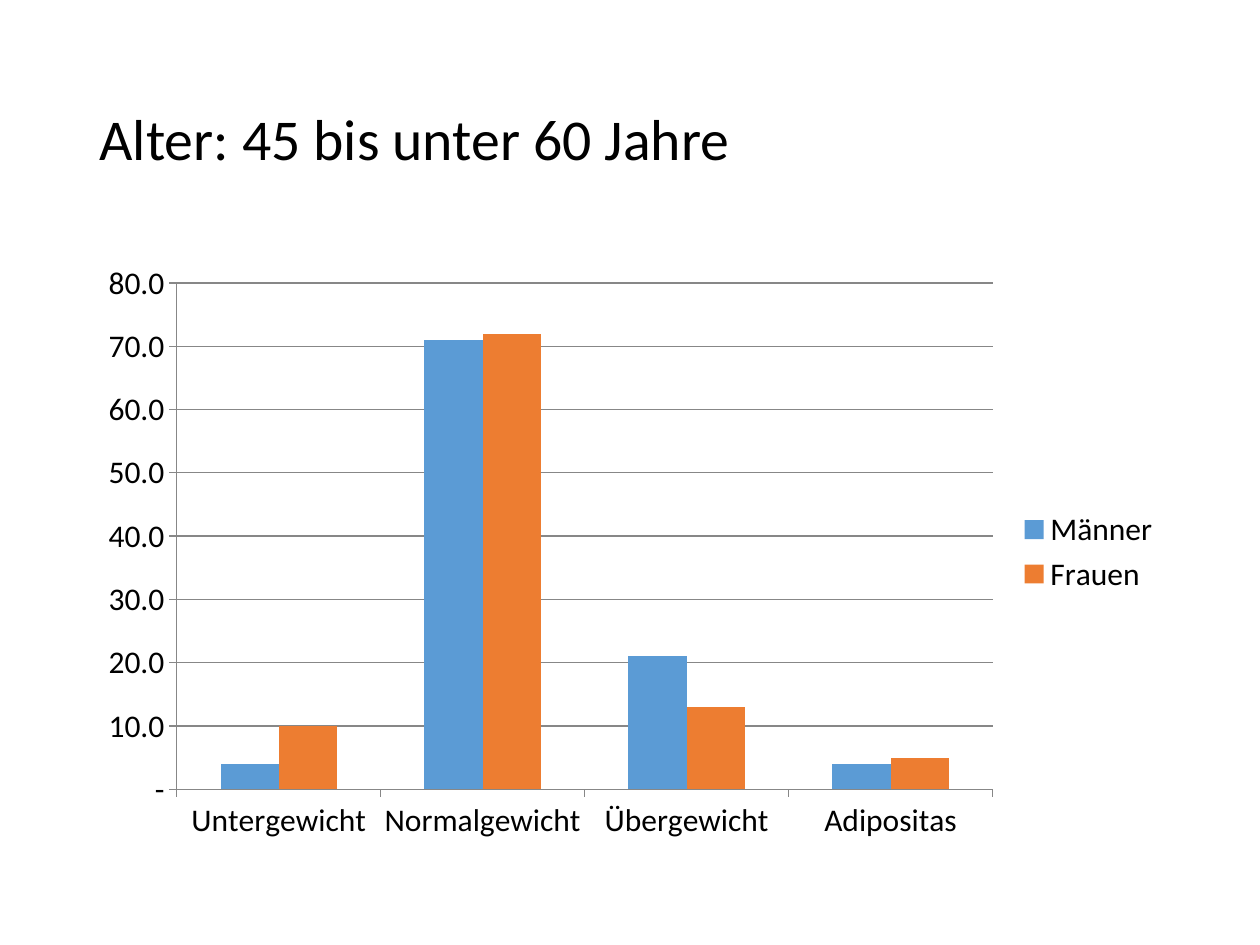
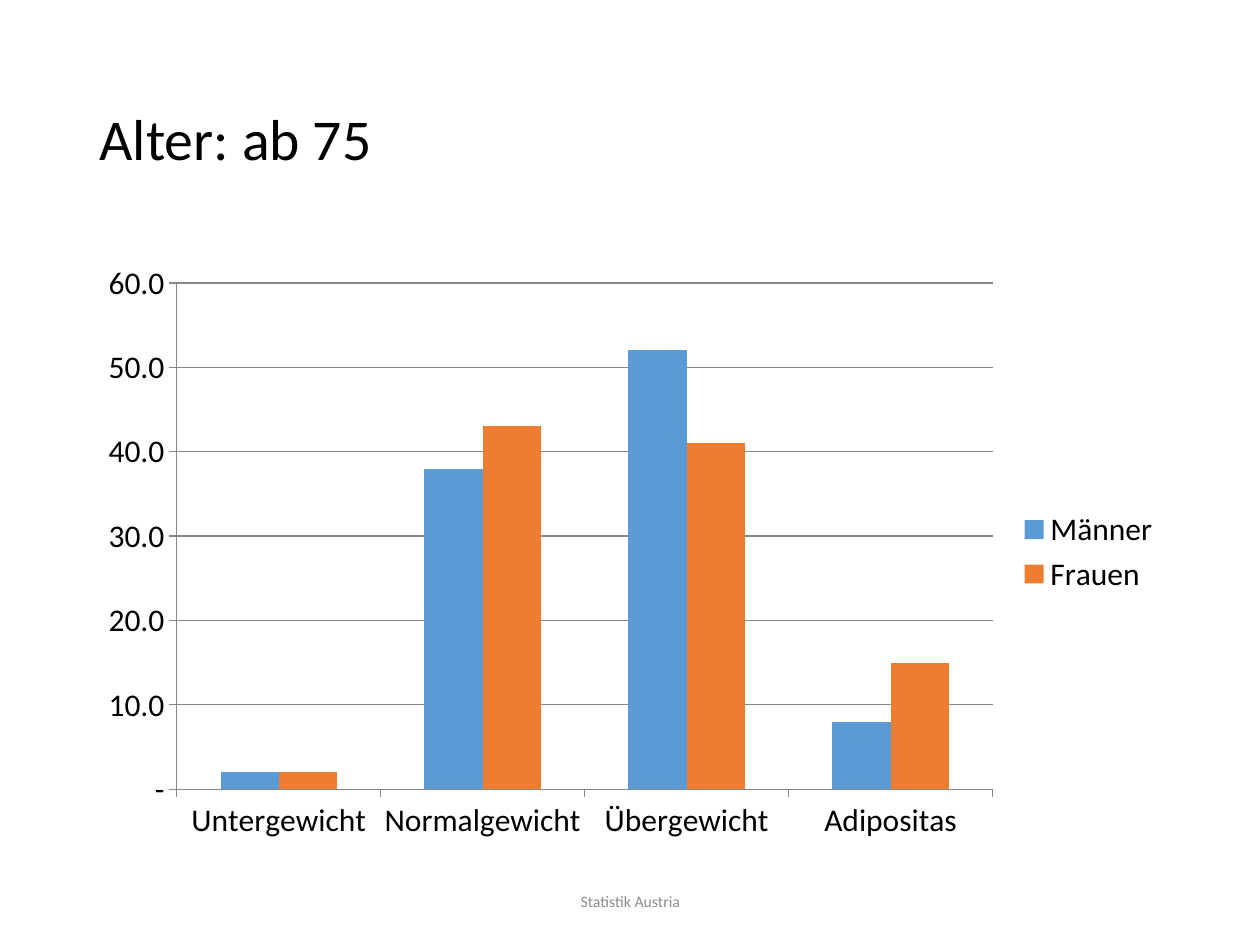
from typing import NamedTuple

import pptx
import pptx.chart.data
import pptx.dml.color
import pptx.enum.chart
import pptx.enum.text
import pptx.util

FONT = "Calibri"
BLACK, GRAY, LINE_GRAY = "000000", "8C8C8C", "878787"
CATEGORIES = ["Untergewicht", "Normalgewicht", "Übergewicht", "Adipositas"]
SERIES_COLORS = {"Männer": "5B9BD5", "Frauen": "ED7D31"}
NUMBER_FORMAT = '#,##0.0;#,##0.0;"-"'
TITLE_ONLY_LAYOUT = 5


class Box(NamedTuple):
    """Hold a region's position and size in centimetres."""
    left: float
    top: float
    width: float
    height: float

    def lengths(self):
        """Return the four values as lengths."""
        return [pptx.util.Cm(value) for value in self]


TITLE_BOX = Box(1.75, 1.02, 21.9, 3.68)
CHART_BOX = Box(1.75, 5.08, 21.9, 12.09)
FOOTER_BOX = Box(8.41, 17.65, 8.59, 1.02)


def color(hex_string):
    """Turn a hex string into a colour."""
    return pptx.dml.color.RGBColor.from_string(hex_string)


def style_font(font, size, hex_string):
    """Set the shared typeface with a size and colour."""
    font.name = FONT
    font.size = pptx.util.Pt(size)
    font.color.rgb = color(hex_string)


def write_line(frame, text, size, hex_string, alignment):
    """Write one vertically centred line of text."""
    frame.word_wrap = True
    frame.auto_size = pptx.enum.text.MSO_AUTO_SIZE.NONE
    frame.vertical_anchor = pptx.enum.text.MSO_ANCHOR.MIDDLE
    para = frame.paragraphs[0]
    para.alignment = alignment
    span = para.add_run()
    span.text = text
    style_font(span.font, size, hex_string)
    return para


def add_title(page, box, text):
    """Place and fill the title placeholder."""
    title = page.shapes.title
    title.left, title.top, title.width, title.height = box.lengths()
    para = write_line(title.text_frame, text, 33, BLACK, pptx.enum.text.PP_ALIGN.LEFT)
    para.line_spacing = 0.9


def style_line(line):
    """Give an axis or gridline its thin gray stroke."""
    line.color.rgb = color(LINE_GRAY)
    line.width = pptx.util.Pt(0.75)


def add_weight_chart(page, box, values):
    """Add the clustered columns of weight classes by sex."""
    data = pptx.chart.data.CategoryChartData(number_format=NUMBER_FORMAT)
    data.categories = CATEGORIES
    for name, series_values in zip(SERIES_COLORS, values):
        data.add_series(name, series_values)
    chart = page.shapes.add_chart(
        pptx.enum.chart.XL_CHART_TYPE.COLUMN_CLUSTERED, *box.lengths(), data
    ).chart
    chart.has_title = False
    style_font(chart.font, 18, BLACK)

    plot = chart.plots[0]
    plot.gap_width = 150
    plot.overlap = 0
    plot.vary_by_categories = False
    for series, hex_string in zip(plot.series, SERIES_COLORS.values()):
        series.format.fill.solid()
        series.format.fill.fore_color.rgb = color(hex_string)

    for axis in (chart.category_axis, chart.value_axis):
        axis.major_tick_mark = pptx.enum.chart.XL_TICK_MARK.OUTSIDE
        axis.minor_tick_mark = pptx.enum.chart.XL_TICK_MARK.NONE
        style_line(axis.format.line)
    chart.value_axis.has_major_gridlines = True
    style_line(chart.value_axis.major_gridlines.format.line)
    labels = chart.value_axis.tick_labels
    labels.number_format = NUMBER_FORMAT
    labels.number_format_is_linked = False

    chart.has_legend = True
    chart.legend.position = pptx.enum.chart.XL_LEGEND_POSITION.RIGHT
    chart.legend.include_in_layout = False


def add_footer(page, box, text):
    """Add the centred source line."""
    footer = page.shapes.add_textbox(*box.lengths())
    write_line(footer.text_frame, text, 9, GRAY, pptx.enum.text.PP_ALIGN.CENTER)


def add_age_slide(deck, title, men, women, source=None):
    """Add a slide comparing the weight classes of one age group."""
    page = deck.slides.add_slide(deck.slide_layouts[TITLE_ONLY_LAYOUT])
    add_title(page, TITLE_BOX, title)
    add_weight_chart(page, CHART_BOX, (men, women))
    if source:
        add_footer(page, FOOTER_BOX, source)


def main():
    """Build and save the deck."""
    deck = pptx.Presentation()
    deck.slide_width = pptx.util.Cm(25.4)
    deck.slide_height = pptx.util.Cm(19.05)
    add_age_slide(deck, "Alter: 45 bis unter 60 Jahre",
                  men=[4, 71, 21, 4], women=[10, 72, 13, 5])
    add_age_slide(deck, "Alter: ab 75",
                  men=[2, 38, 52, 8], women=[2, 43, 41, 15],
                  source="Statistik Austria")
    deck.save("out.pptx")


if __name__ == "__main__":
    main()
